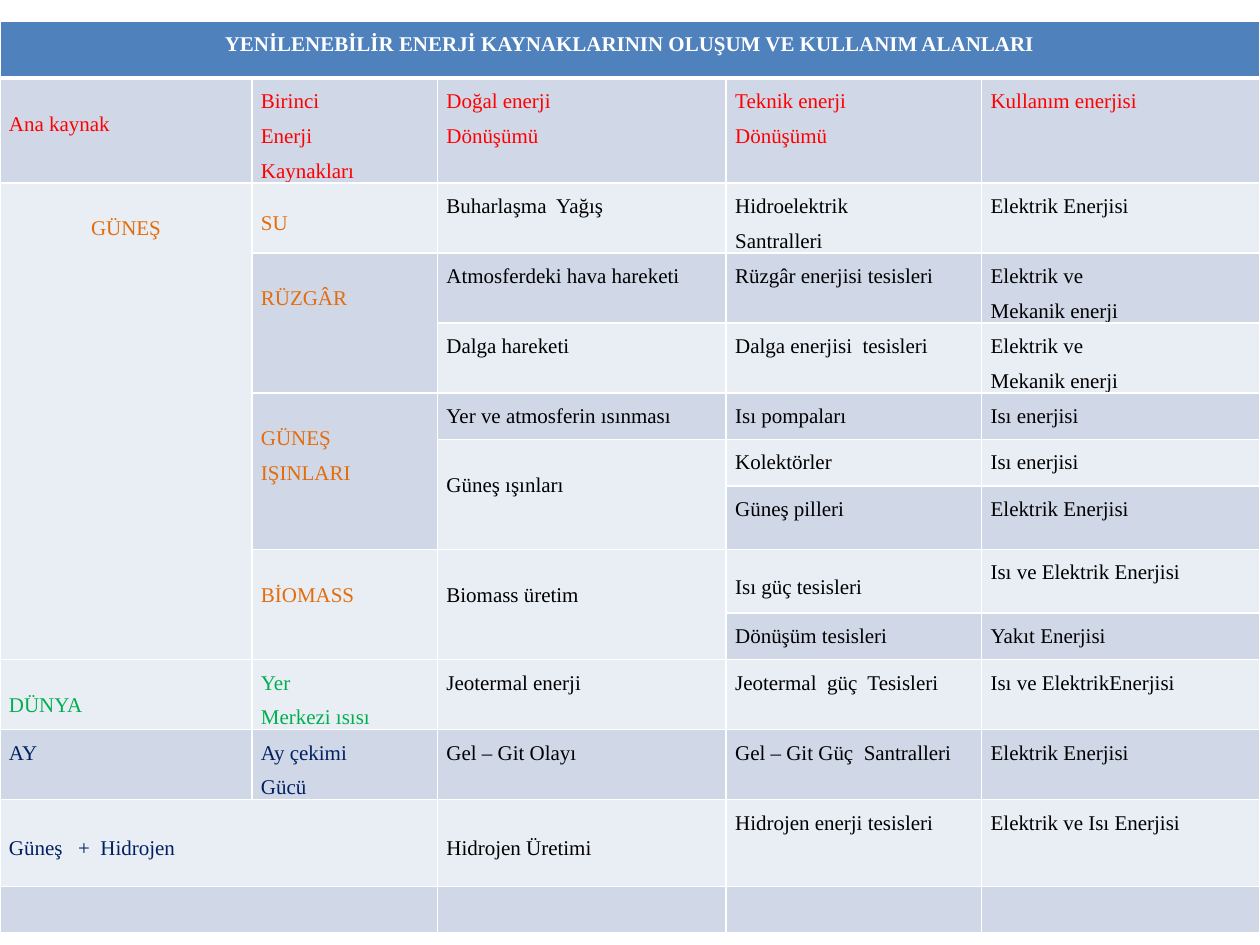
from lxml.etree import SubElement
from pptx import Presentation
from pptx.dml.color import RGBColor
from pptx.enum.text import MSO_ANCHOR, PP_ALIGN
from pptx.oxml.ns import qn
from pptx.util import Cm, Pt

COLORS = {
    "title": "4F81BD", "dark band": "D0D8E8", "light band": "E9EDF4",
    "white": "FFFFFF", "black": "000000", "red": "FF0000",
    "orange": "E46C0A", "green": "00B050", "navy": "002060",
}
FONT = "Times New Roman"
LEFT, UP = "<", "^"  # cell joins its neighbour on the left or above

COLUMN_WIDTHS = [5.08, 3.74, 5.82, 5.15, 5.6]  # cm
# Row height in cm, colour of the source columns, cell texts
ROWS = [
    (1.14, "white", ["YENİLENEBİLİR ENERJİ KAYNAKLARININ OLUŞUM VE KULLANIM ALANLARI",
                     LEFT, LEFT, LEFT, LEFT]),
    (2.1, "red", ["Ana kaynak", "Birinci\nEnerji\nKaynakları", "Doğal enerji\nDönüşümü",
                  "Teknik enerji\nDönüşümü", "Kullanım enerjisi"]),
    (1.37, "orange", ["GÜNEŞ", "SU", "Buharlaşma  Yağış",
                      "Hidroelektrik\nSantralleri", "Elektrik Enerjisi"]),
    (1.37, "orange", [UP, "RÜZGÂR", "Atmosferdeki hava hareketi",
                      "Rüzgâr enerjisi tesisleri", "Elektrik ve\nMekanik enerji"]),
    (1.37, "orange", [UP, UP, "Dalga hareketi",
                      "Dalga enerjisi  tesisleri", "Elektrik ve\nMekanik enerji"]),
    (0.94, "orange", [UP, "GÜNEŞ\nIŞINLARI", "Yer ve atmosferin ısınması",
                      "Isı pompaları", "Isı enerjisi"]),
    (0.94, "orange", [UP, UP, "Güneş ışınları", "Kolektörler", "Isı enerjisi"]),
    (1.28, "orange", [UP, UP, UP, "Güneş pilleri", "Elektrik Enerjisi"]),
    (1.28, "orange", [UP, "BİOMASS", "Biomass üretim",
                      "Isı güç tesisleri", "Isı ve Elektrik Enerjisi"]),
    (0.94, "orange", [UP, UP, UP, "Dönüşüm tesisleri", "Yakıt Enerjisi"]),
    (1.37, "green", ["DÜNYA", "Yer\nMerkezi ısısı", "Jeotermal enerji",
                     "Jeotermal  güç  Tesisleri", "Isı ve ElektrikEnerjisi"]),
    (1.37, "navy", ["AY", "Ay çekimi\nGücü", "Gel – Git Olayı",
                    "Gel – Git Güç  Santralleri", "Elektrik Enerjisi"]),
    (1.75, "navy", ["Güneş   +  Hidrojen", LEFT, "Hidrojen Üretimi",
                    "Hidrojen enerji tesisleri", "Elektrik ve Isı Enerjisi"]),
    (0.94, "navy", ["", LEFT, "", "", ""]),
]
# Exceptions, as (row, column)
LOWERED = {(1, 0), (2, 0), (3, 1), (5, 1), (6, 2), (8, 1), (8, 2), (10, 0)}
MIDDLE = {(2, 1), (8, 3), (12, 0), (12, 2)}
ALIGNMENTS = {(0, 0): PP_ALIGN.CENTER, (2, 0): PP_ALIGN.CENTER,
              (10, 0): PP_ALIGN.JUSTIFY, (11, 0): PP_ALIGN.JUSTIFY}


def rgb(name):
    return RGBColor.from_string(COLORS[name])


def add_borders(cell, bottom_width):
    properties = cell._tc.get_or_add_tcPr()
    for side, width in (("L", 1), ("R", 1), ("T", 1), ("B", bottom_width)):
        line = SubElement(properties, qn(f"a:ln{side}"), w=str(Pt(width)))
        fill = SubElement(line, qn("a:solidFill"))
        SubElement(fill, qn("a:srgbClr"), val=COLORS["white"])


def span_end(row, column):
    """Last row and column of the merged area that starts here."""
    last_row, last_column = row, column
    while last_row + 1 < len(ROWS) and ROWS[last_row + 1][2][column] == UP:
        last_row += 1
    while last_column + 1 < len(COLUMN_WIDTHS) and ROWS[row][2][last_column + 1] == LEFT:
        last_column += 1
    return last_row, last_column


def write_text(cell, text, position, color):
    cell.text_frame.text = text
    for paragraph in cell.text_frame.paragraphs:
        paragraph.line_spacing = 1.5
        paragraph.alignment = ALIGNMENTS.get(position, PP_ALIGN.LEFT)
        paragraph.font.name = FONT
        paragraph.font.size = Pt(12)
        paragraph.font.bold = position[0] == 0
        paragraph.font.color.rgb = rgb(color)


presentation = Presentation()
presentation.slide_width, presentation.slide_height = Cm(25.4), Cm(19.05)
slide = presentation.slides.add_slide(presentation.slide_layouts[6])

# Table grid
table = slide.shapes.add_table(
    len(ROWS), len(COLUMN_WIDTHS), Cm(0), Cm(0.43), Cm(25.4), Cm(18.62)).table
for column, width in zip(table.columns, COLUMN_WIDTHS):
    column.width = Cm(width)

# Cells
for row, (height, source_color, texts) in enumerate(ROWS):
    table.rows[row].height = Cm(height)
    band = "title" if row == 0 else "dark band" if row % 2 else "light band"
    for column, text in enumerate(texts):
        cell, position = table.cell(row, column), (row, column)
        cell.margin_left = cell.margin_right = Cm(0.18)
        cell.margin_top = Cm(0.46 if position in LOWERED else 0)
        cell.margin_bottom = Cm(0)
        cell.vertical_anchor = MSO_ANCHOR.MIDDLE if position in MIDDLE else MSO_ANCHOR.TOP
        add_borders(cell, 3 if row == 0 else 1)
        cell.fill.solid()
        cell.fill.fore_color.rgb = rgb(band)
        if text in (LEFT, UP):
            continue
        end = span_end(row, column)
        if end != position:
            cell.merge(table.cell(*end))
        if text:
            colored = column < 2 or row < 2
            write_text(cell, text, position, source_color if colored else "black")

presentation.save("out.pptx")
